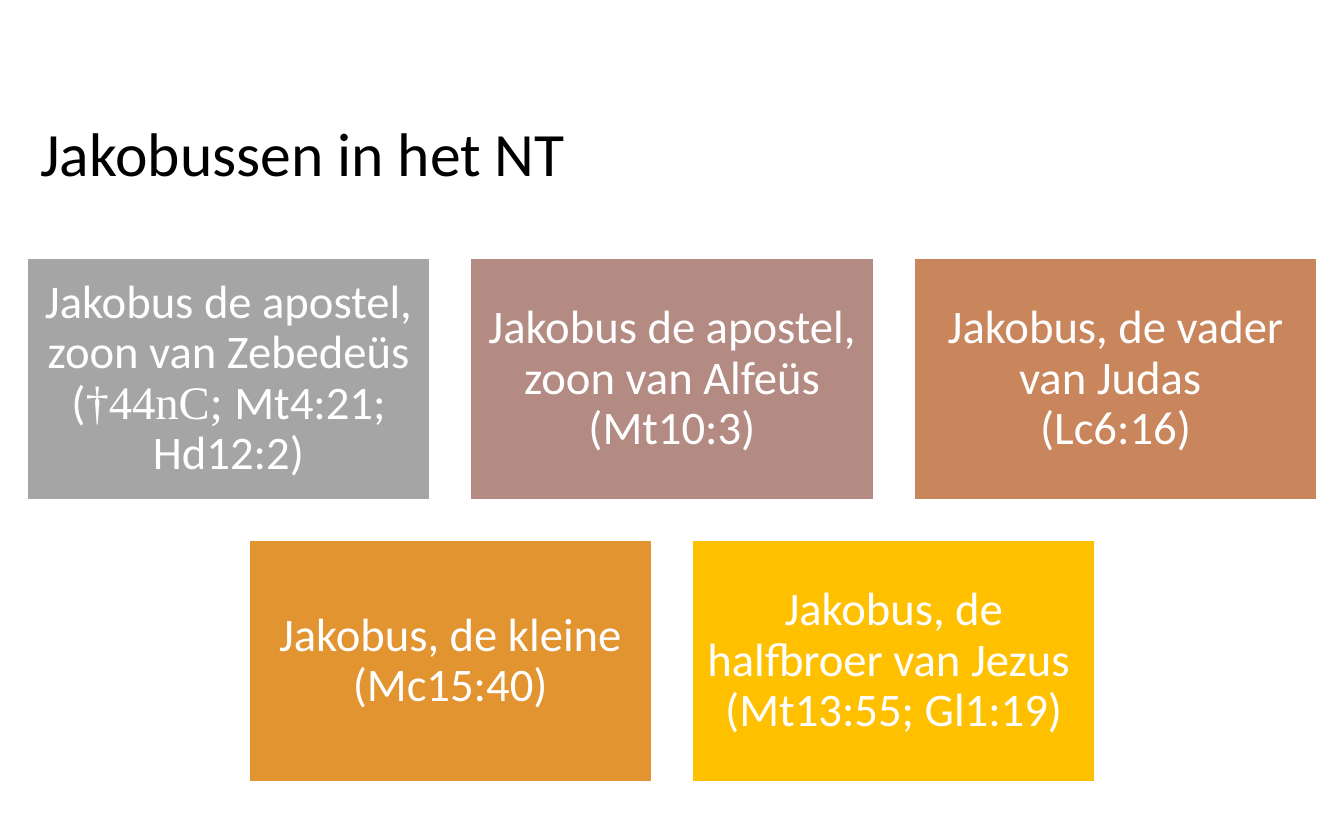
"""Build a slide listing the men named Jakobus in the New Testament."""
from pptx import Presentation
from pptx.dml.color import RGBColor
from pptx.enum.shapes import MSO_SHAPE
from pptx.enum.text import MSO_ANCHOR, PP_ALIGN
from pptx.util import Inches, Pt

COLORS = {
    "text": "000000", "white": "FFFFFF", "gray": "A5A5A5", "rose": "B48B83",
    "copper": "C9855C", "orange": "E19430", "gold": "FFC000",
}
BODY_FONT, DATE_FONT = "Calibri", "Times New Roman"
TITLE = "Jakobussen in het NT"
ROWS = [
    [
        ("gray", [
            [("Jakobus de apostel, zoon van Zebedeüs", BODY_FONT)],
            [("(", BODY_FONT), ("†44nC; ", DATE_FONT), ("Mt4:21; Hd12:2)", BODY_FONT)],
        ]),
        ("rose", [
            [("Jakobus de apostel, zoon van Alfeüs", BODY_FONT)],
            [("(Mt10:3)", BODY_FONT)],
        ]),
        ("copper", [
            [("Jakobus, de vader van Judas ", BODY_FONT)],
            [("(Lc6:16)", BODY_FONT)],
        ]),
    ],
    [
        ("orange", [[("Jakobus, de kleine (Mc15:40)", BODY_FONT)]]),
        ("gold", [
            [("Jakobus, de halfbroer van Jezus ", BODY_FONT)],
            [("(Mt13:55; Gl1:19)", BODY_FONT)],
        ]),
    ],
]
SLIDE_WIDTH, SLIDE_HEIGHT = 10, 6.25
BOX_WIDTH, BOX_HEIGHT, GAP, TOP = 3, 1.8, 0.3, 1.92
TITLE_PLACE = {"left": 0.2, "top": 0.68, "width": 9.3, "height": 0.97}
FRAME_FORMAT = {
    "word_wrap": True, "vertical_anchor": MSO_ANCHOR.MIDDLE,
    "margin_left": Inches(0.1), "margin_right": Inches(0.1),
    "margin_top": Inches(0.1), "margin_bottom": Inches(0.1),
}


def color(name):
    return RGBColor.from_string(COLORS[name])


def set_format(target, values):
    for name, value in values.items():
        setattr(target, name, value)


def write_lines(shape, lines, size, color_name, alignment):
    set_format(shape.text_frame, FRAME_FORMAT)
    paragraph = shape.text_frame.paragraphs[0]
    set_format(paragraph, {"alignment": alignment, "line_spacing": 0.9})
    for index, line in enumerate(lines):
        if index:
            paragraph.add_line_break()
        for text, font_name in line:
            run = paragraph.add_run()
            run.text = text
            set_format(run.font, {"name": font_name, "size": Pt(size)})
            run.font.color.rgb = color(color_name)


def add_box(slide, left, top, fill_name, lines):
    shape = slide.shapes.add_shape(
        MSO_SHAPE.RECTANGLE, Inches(left), Inches(top), Inches(BOX_WIDTH), Inches(BOX_HEIGHT)
    )
    shape.shadow.inherit = False
    shape.fill.solid()
    shape.fill.fore_color.rgb = color(fill_name)
    shape.line.color.rgb = color("white")
    shape.line.width = Pt(1)
    write_lines(shape, lines, 25, "white", PP_ALIGN.CENTER)


def main():
    presentation = Presentation()
    set_format(presentation, {
        "slide_width": Inches(SLIDE_WIDTH), "slide_height": Inches(SLIDE_HEIGHT),
    })
    slide = presentation.slides.add_slide(presentation.slide_layouts[5])
    title = slide.shapes.title
    set_format(title, {name: Inches(value) for name, value in TITLE_PLACE.items()})
    write_lines(title, [[(TITLE, BODY_FONT)]], 33, "text", PP_ALIGN.LEFT)

    for row_index, row in enumerate(ROWS):
        row_width = len(row) * (BOX_WIDTH + GAP) - GAP
        start = (SLIDE_WIDTH - row_width) / 2
        top = TOP + row_index * (BOX_HEIGHT + GAP)
        for column, (fill_name, lines) in enumerate(row):
            add_box(slide, start + column * (BOX_WIDTH + GAP), top, fill_name, lines)

    presentation.save("out.pptx")


if __name__ == "__main__":
    main()
